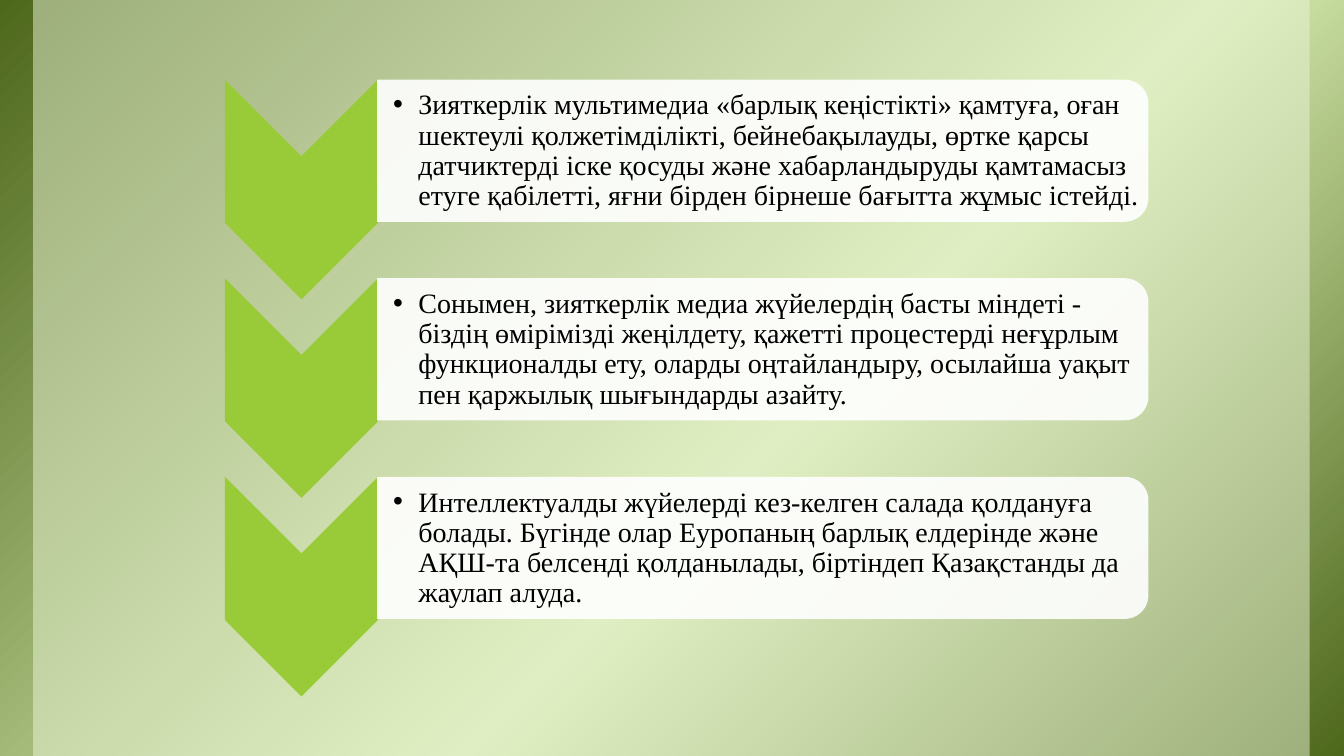
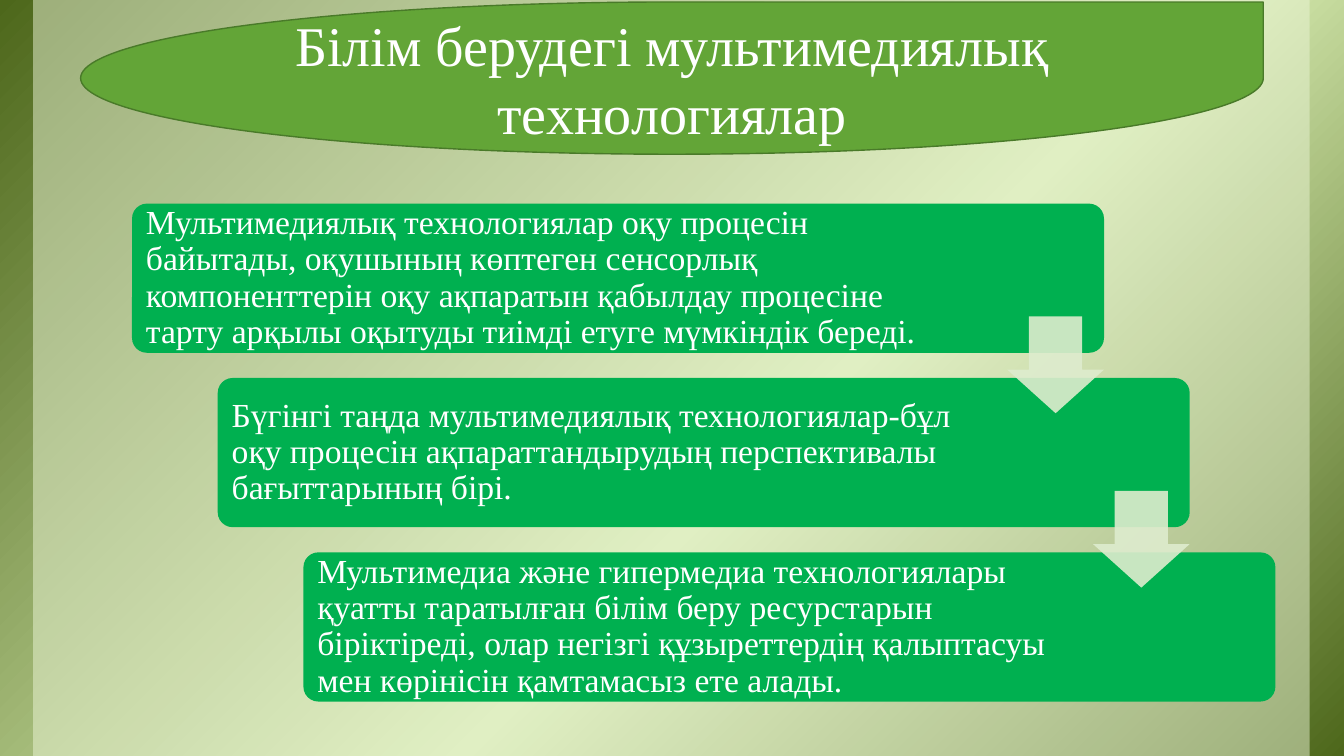
from dataclasses import dataclass

from lxml import etree
from pptx import Presentation
from pptx.dml.color import RGBColor
from pptx.enum.shapes import MSO_SHAPE
from pptx.enum.text import MSO_ANCHOR, MSO_AUTO_SIZE, PP_ALIGN
from pptx.oxml.ns import qn
from pptx.util import Inches, Pt

RECTANGLE = MSO_SHAPE.RECTANGLE
CHEVRON = MSO_SHAPE.CHEVRON
ROUND_TOP = MSO_SHAPE.ROUND_2_SAME_RECTANGLE
ROUNDED = MSO_SHAPE.ROUNDED_RECTANGLE
DOWN_ARROW = MSO_SHAPE.DOWN_ARROW
TEARDROP = MSO_SHAPE.TEAR
MIDDLE = MSO_ANCHOR.MIDDLE
CENTER = PP_ALIGN.CENTER
NO_AUTOFIT = MSO_AUTO_SIZE.NONE
LAYOUT_TITLE_ONLY = 5
LAYOUT_BLANK = 6


@dataclass(frozen=True)
class Theme:
    font: str = "Times New Roman"
    title_size: int = 40
    step_size: int = 24
    point_size: int = 20
    frame_dark: str = "4D671B"
    frame_light: str = "D6EAAF"
    panel: str = "EBF5D7"
    chevron: str = "99CB38"
    step: str = "00B050"
    arrow: str = "DEECCE"
    title_fill: str = "63A537"
    title_line: str = "497A29"
    light: str = "FFFFFF"
    dark: str = "000000"


THEME = Theme()


@dataclass(frozen=True)
class Box:
    """A visible area, in inches."""
    left: float
    top: float
    width: float
    height: float

    def shifted(self, right: float, down: float) -> "Box":
        return Box(self.left + right, self.top + down, self.width, self.height)

    def turned(self) -> "Box":
        """The frame that covers this area after a quarter turn."""
        return Box(self.left + (self.width - self.height) / 2,
                   self.top + (self.height - self.width) / 2,
                   self.height, self.width)

    def emu(self) -> tuple[int, int, int, int]:
        return (Inches(self.left), Inches(self.top),
                Inches(self.width), Inches(self.height))


@dataclass(frozen=True)
class Step:
    text: str
    text_width: float


SLIDE = Box(0, 0, 13.33, 7.5)
PANEL = Box(0.33, 0, 12.66, 7.5)

POINT_PITCH = 1.97
POINT_CHEVRON = Box(2.23, 0.79, 1.52, 2.18)
POINT_CARD = Box(3.74, 0.79, 7.65, 1.41)
POINT_TEXT = Box(3.74, 0.86, 7.58, 1.28)
POINT_INSETS = (0.16, 0.01, 0.01, 0.01)
POINT_INDENT = 0.25

STEP_COLUMN = 0.85
STEP_ROW = 1.73
STEP_CARD = Box(1.31, 2.02, 9.64, 1.48)
STEP_INSETS = (0.1, 0.1, 0.1, 0.1)
STEP_MARGIN = 0.04
STEP_ARROW = Box(9.99, 3.14, 0.96, 0.96)

TITLE_SHAPE = Box(0.8, 0.02, 11.73, 1.51)
TITLE_TEXT = Box(2.52, 0.02, 8.29, 1.51)

TITLE = "Білім берудегі мультимедиялық технологиялар"
POINTS = (
    "Зияткерлік мультимедиа «барлық кеңістікті» қамтуға, оған шектеулі "
    "қолжетімділікті, бейнебақылауды, өртке қарсы датчиктерді іске қосуды "
    "және хабарландыруды қамтамасыз етуге қабілетті, яғни бірден бірнеше "
    "бағытта жұмыс істейді.",
    "Сонымен, зияткерлік медиа жүйелердің басты міндеті - біздің өмірімізді "
    "жеңілдету, қажетті процестерді неғұрлым функционалды ету, оларды "
    "оңтайландыру, осылайша уақыт пен қаржылық шығындарды азайту.",
    "Интеллектуалды жүйелерді кез-келген салада қолдануға болады. Бүгінде "
    "олар Еуропаның барлық елдерінде және АҚШ-та белсенді қолданылады, "
    "біртіндеп Қазақстанды да жаулап алуда.",
)
STEPS = (
    Step("Мультимедиялық технологиялар оқу процесін байытады, оқушының "
         "көптеген сенсорлық компоненттерін оқу ақпаратын қабылдау процесіне "
         "тарту арқылы оқытуды тиімді етуге мүмкіндік береді.", 8.04),
    Step("Бүгінгі таңда мультимедиялық технологиялар-бұл оқу процесін "
         "ақпараттандырудың перспективалы бағыттарының бірі.", 7.74),
    Step("Мультимедиа және гипермедиа технологиялары қуатты таратылған білім "
         "беру ресурстарын біріктіреді, олар негізгі құзыреттердің "
         "қалыптасуы мен көрінісін қамтамасыз ете алады.", 7.74),
)


def add_filled(slide, kind, box: Box, color: str, opacity: int = 100,
               quarter_turn: bool = False):
    """Add a preset shape without outline; opacity is a percentage."""
    frame = box.turned() if quarter_turn else box
    shape = slide.shapes.add_shape(kind, *frame.emu())
    shape.rotation = 90 if quarter_turn else 0
    shape.shadow.inherit = False
    shape.line.fill.background()
    shape.fill.solid()
    shape.fill.fore_color.rgb = RGBColor.from_string(color)
    if opacity < 100:
        rgb = shape.fill._xPr.find(qn("a:solidFill")).find(qn("a:srgbClr"))
        etree.SubElement(rgb, qn("a:alpha"), val=str(opacity * 1000))
    return shape


def set_gradient(shape, stops: tuple[tuple[int, str], ...]) -> None:
    """Fill from top left to bottom right; stops pair a percentage and a colour."""
    shape.fill.gradient()
    shape.fill.gradient_angle = 315
    stop_list = shape._element.spPr.find(".//" + qn("a:gsLst"))
    for old_stop in list(stop_list):
        stop_list.remove(old_stop)
    for position, color in stops:
        stop = etree.SubElement(stop_list, qn("a:gs"), pos=str(position * 1000))
        etree.SubElement(stop, qn("a:srgbClr"), val=color)


def format_text(frame, text: str, size: int, color: str):
    frame.word_wrap = True
    frame.auto_size = NO_AUTOFIT
    frame.vertical_anchor = MIDDLE
    frame.text = text
    paragraph = frame.paragraphs[0]
    for run in paragraph.runs:
        run.font.name = THEME.font
        run.font.size = Pt(size)
        run.font.color.rgb = RGBColor.from_string(color)
    return paragraph


def add_text(slide, box: Box, insets: tuple[float, ...], text: str,
             size: int, color: str):
    frame = slide.shapes.add_textbox(*box.emu()).text_frame
    (frame.margin_left, frame.margin_top,
     frame.margin_right, frame.margin_bottom) = map(Inches, insets)
    paragraph = format_text(frame, text, size, color)
    paragraph.line_spacing = 0.9
    return paragraph


def add_bullet(paragraph, indent: float) -> None:
    properties = paragraph._p.get_or_add_pPr()
    properties.set("marL", str(Inches(indent)))
    properties.set("indent", str(-Inches(indent)))
    etree.SubElement(properties, qn("a:buFont"), typeface="Arial")
    etree.SubElement(properties, qn("a:buChar"), char="•")


def move_to_master(master, slide, shapes) -> None:
    """Put shapes drawn on a slide behind everything on the master."""
    for depth, shape in enumerate(shapes, start=2):
        slide.shapes._spTree.remove(shape._element)
        master.shapes._spTree.insert(depth, shape._element)


def add_backdrop(master, slide) -> None:
    frame = add_filled(slide, RECTANGLE, SLIDE, THEME.frame_dark)
    set_gradient(frame, ((0, THEME.frame_dark), (58, THEME.frame_light),
                         (100, THEME.frame_dark)))
    panel = add_filled(slide, RECTANGLE, PANEL, THEME.panel, opacity=50)
    move_to_master(master, slide, (frame, panel))


def add_point(slide, row: int, text: str) -> None:
    down = row * POINT_PITCH
    add_filled(slide, CHEVRON, POINT_CHEVRON.shifted(0, down), THEME.chevron,
               quarter_turn=True)
    add_filled(slide, ROUND_TOP, POINT_CARD.shifted(0, down), THEME.light,
               opacity=90, quarter_turn=True)
    paragraph = add_text(slide, POINT_TEXT.shifted(0, down), POINT_INSETS,
                         text, THEME.point_size, THEME.dark)
    add_bullet(paragraph, POINT_INDENT)


def add_step(slide, position: int, step: Step) -> None:
    card = STEP_CARD.shifted(position * STEP_COLUMN, position * STEP_ROW)
    add_filled(slide, ROUNDED, card, THEME.step).adjustments[0] = 0.1
    text_area = Box(card.left + STEP_MARGIN, card.top + STEP_MARGIN,
                    step.text_width, card.height - 2 * STEP_MARGIN)
    add_text(slide, text_area, STEP_INSETS, step.text,
             THEME.step_size, THEME.light)


def add_step_arrow(slide, position: int) -> None:
    box = STEP_ARROW.shifted(position * STEP_COLUMN, position * STEP_ROW)
    arrow = add_filled(slide, DOWN_ARROW, box, THEME.arrow, opacity=90)
    arrow.adjustments[0] = 0.55
    arrow.adjustments[1] = 0.45


def add_title(slide, text: str) -> None:
    banner = add_filled(slide, TEARDROP, TITLE_SHAPE, THEME.title_fill)
    banner.line.color.rgb = RGBColor.from_string(THEME.title_line)
    banner.line.width = Pt(1)
    title = slide.shapes.title
    title.left, title.top, title.width, title.height = TITLE_TEXT.emu()
    format_text(title.text_frame, text, THEME.title_size,
                THEME.light).alignment = CENTER
    slide.shapes._spTree.append(title._element)


def main() -> None:
    deck = Presentation()
    deck.slide_width, deck.slide_height = Inches(SLIDE.width), Inches(SLIDE.height)

    points_slide = deck.slides.add_slide(deck.slide_layouts[LAYOUT_BLANK])
    add_backdrop(deck.slide_master, points_slide)
    for row, text in enumerate(POINTS):
        add_point(points_slide, row, text)

    steps_slide = deck.slides.add_slide(deck.slide_layouts[LAYOUT_TITLE_ONLY])
    for position, step in enumerate(STEPS):
        add_step(steps_slide, position, step)
    for position in range(len(STEPS) - 1):
        add_step_arrow(steps_slide, position)
    add_title(steps_slide, TITLE)

    deck.save("out.pptx")


if __name__ == "__main__":
    main()
